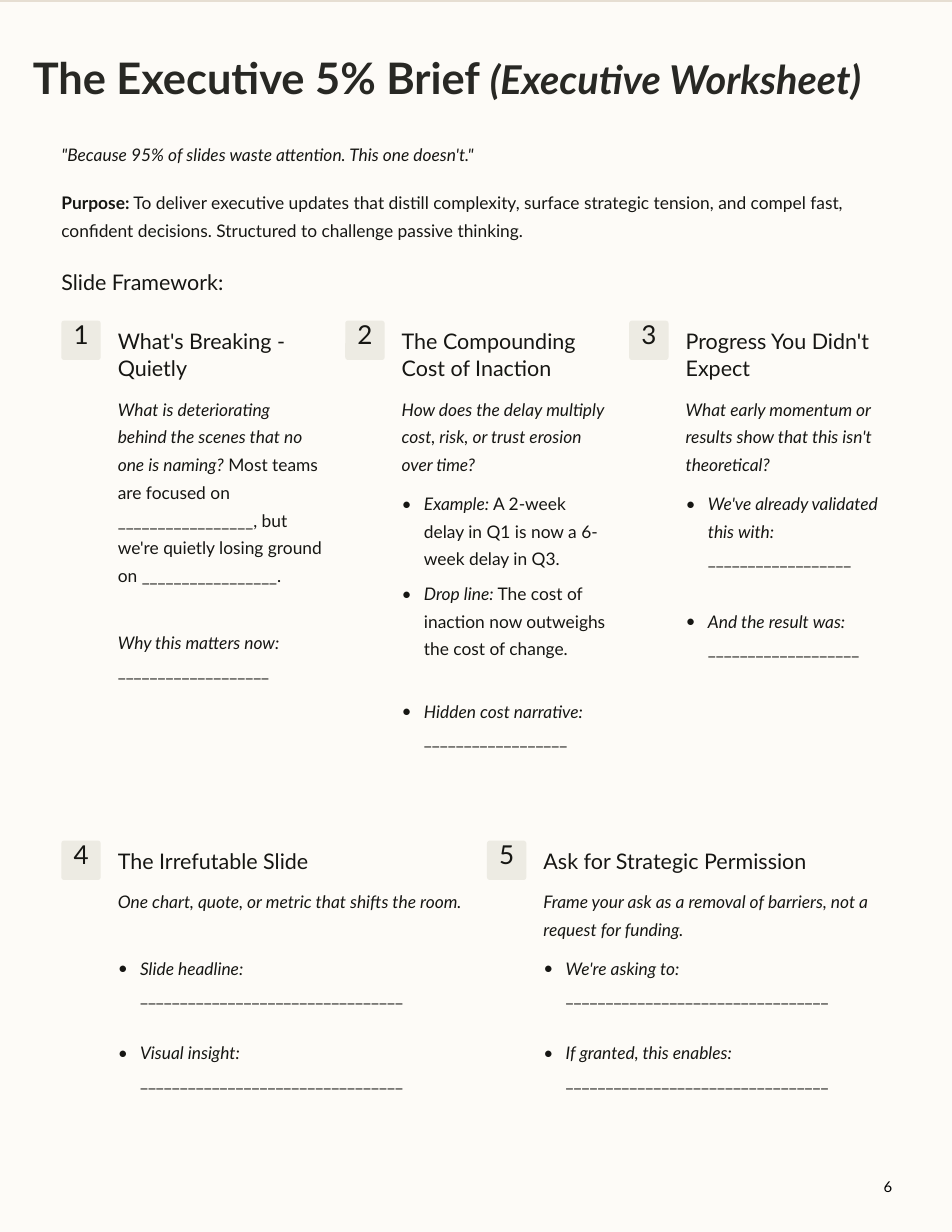
from dataclasses import dataclass
from lxml.etree import SubElement
from pptx import Presentation
from pptx.dml.color import RGBColor
from pptx.enum.shapes import MSO_SHAPE
from pptx.enum.text import PP_ALIGN
from pptx.oxml.ns import qn
from pptx.util import Cm, Pt


@dataclass(frozen=True)
class Theme:
    font: str = "Lato"
    paper: str = "FDFBF7"
    edge: str = "E6DED2"
    badge: str = "EDEBE3"
    dark: str = "282824"
    ink: str = "161613"
    black: str = "000000"
    title: float = 52.5
    subtitle: float = 48
    head: float = 26
    number: float = 31.5
    body: float = 21
    page: float = 18


theme = Theme()

TITLE = ("The Executive 5% Brief ", "(Executive Worksheet)")
QUOTE = '"Because 95% of slides waste attention. This one doesn\'t."'
PURPOSE = ("Purpose:", " To deliver executive updates that distill complexity, surface "
           "strategic tension, and compel fast, confident decisions. Structured to "
           "challenge passive thinking.")
FRAME = "Slide Framework:"
PAGE = "6"

# Section: heading, then parts of (bulleted, lines held, italic lead, plain rest)
TOP = [
    ("What's Breaking - Quietly", [
        (False, 8, "What is deteriorating behind the scenes that no one is naming?",
         " Most teams are focused on " + "_" * 17
         + ", but we're quietly losing ground on " + "_" * 17 + "."),
        (False, 3, "Why this matters now:", " " + "_" * 19)]),
    ("The Compounding Cost of Inaction", [
        (False, 3, "How does the delay multiply cost, risk, or trust erosion over time?", ""),
        (True, 3, "Example:", " A 2-week delay in Q1 is now a 6-week delay in Q3."),
        (True, 4, "Drop line:", " The cost of inaction now outweighs the cost of change."),
        (True, 4, "Hidden cost narrative:", " " + "_" * 18)]),
    ("Progress You Didn't Expect", [
        (False, 3, "What early momentum or results show that this isn't theoretical?", ""),
        (True, 4, "We've already validated this with:", " " + "_" * 18),
        (True, 3, "And the result was:", " " + "_" * 19)]),
]
LOW = [
    ("The Irrefutable Slide", [
        (False, 2, "One chart, quote, or metric that shifts the room.", ""),
        (True, 2, "Slide headline:", " " + "_" * 33),
        (True, 2, "Visual insight:", " " + "_" * 33)]),
    ("Ask for Strategic Permission", [
        (False, 2, "Frame your ask as a removal of barriers, not a request for funding.", ""),
        (True, 2, "We're asking to:", " " + "_" * 33),
        (True, 2, "If granted, this enables:", " " + "_" * 33)]),
]
# Row: sections, top, column pitch, text width, heading lines, gap between bullets
ROWS = [(TOP, 13.69, 12.12, 8.76, 2, 0.27), (LOW, 35.89, 18.17, 14.83, 1, 1.23)]

LEFT, WIDE = 2.62, 35.43
INDENT = 2.41
LINE, HEAD_LINE = 1.19, 1.17
BODY_LEAD, HEAD_LEAD = 33.5, 33
PART_GAP = 0.45


def paint(shape, color):
    shape.shadow.inherit = False
    shape.fill.solid()
    shape.fill.fore_color.rgb = RGBColor.from_string(color)
    shape.line.fill.background()


def bullet(para):
    props = para._p.get_or_add_pPr()
    props.set("marL", str(Cm(0.95)))
    props.set("indent", str(-Cm(0.95)))
    SubElement(props, qn("a:buSzPct")).set("val", "100000")
    SubElement(props, qn("a:buFont")).set("typeface", theme.font)
    SubElement(props, qn("a:buChar")).set("char", "•")
    para.font.size = Pt(theme.body)


def write(slide, area, runs, lead=None, wrap=True, dot=False, align=None, color=theme.ink):
    """Add a text box; each run is (text, size, style), style holding b and i."""
    box = slide.shapes.add_textbox(*(Cm(n) for n in area))
    frame = box.text_frame
    frame.word_wrap = wrap
    para = frame.paragraphs[0]
    if lead:
        frame.margin_left = frame.margin_right = frame.margin_top = frame.margin_bottom = 0
        para.line_spacing = Pt(lead)
    if align is not None:
        para.alignment = align
    if dot:
        bullet(para)
    for text, size, style in runs:
        if text:
            run = para.add_run()
            run.text = text
            font = run.font
            font.name, font.size = theme.font, Pt(size)
            font.bold, font.italic = "b" in style, "i" in style
            font.color.rgb = RGBColor.from_string(color)


def section(slide, number, x, y, width, head, lines, parts, gap):
    """Draw a numbered badge, its heading and the parts stacked below."""
    badge = slide.shapes.add_shape(MSO_SHAPE.ROUNDED_RECTANGLE,
                                   Cm(x), Cm(y), Cm(1.68), Cm(1.68))
    badge.adjustments[0] = 0.07
    paint(badge, theme.badge)
    write(slide, (x + 0.28, y + 0.15, 1.12, 1.4), [(str(number), theme.number, "")],
          theme.number, wrap=False, align=PP_ALIGN.CENTER)

    x, y = x + INDENT, y + 0.25
    write(slide, (x, y, width, lines * HEAD_LINE), [(head, theme.head, "")],
          HEAD_LEAD, wrap=lines > 1)
    y += lines * HEAD_LINE + 0.46
    for dot, count, lead, rest in parts:
        tall = count * LINE
        write(slide, (x, y, width, tall),
              [(lead, theme.body, "i"), (rest, theme.body, "")], BODY_LEAD, dot=dot)
        y += tall + (gap if dot else PART_GAP)


def main():
    deck = Presentation()
    deck.slide_width, deck.slide_height = Cm(40.64), Cm(52.6)
    slide = deck.slides.add_slide(deck.slide_layouts[6])
    back = slide.background.fill
    back.solid()
    back.fore_color.rgb = RGBColor.from_string(theme.paper)
    edge = slide.shapes.add_shape(MSO_SHAPE.RECTANGLE, 0, 0, deck.slide_width, Cm(0.08))
    paint(edge, theme.edge)

    write(slide, (1.4, 2.06, 37.5, 2.34),
          [(TITLE[0], theme.title, "b"), (TITLE[1], theme.subtitle, "bi")],
          66, color=theme.dark)
    write(slide, (LEFT, 5.87, WIDE, LINE), [(QUOTE, theme.body, "i")], BODY_LEAD, wrap=False)
    write(slide, (LEFT, 7.91, WIDE, 2 * LINE),
          [(PURPOSE[0], theme.body, "b"), (PURPOSE[1], theme.body, "")], BODY_LEAD)
    write(slide, (LEFT, 11.42, 9.32, HEAD_LINE), [(FRAME, theme.head, "")],
          HEAD_LEAD, wrap=False)

    number = 0
    for sections, top, pitch, width, lines, gap in ROWS:
        for col, (head, parts) in enumerate(sections):
            number += 1
            section(slide, number, LEFT + col * pitch, top, width, head, lines, parts, gap)

    write(slide, (37.47, 50.14, 2.39, 1.02), [(PAGE, theme.page, "")], color=theme.black)
    deck.save("out.pptx")


if __name__ == "__main__":
    main()
